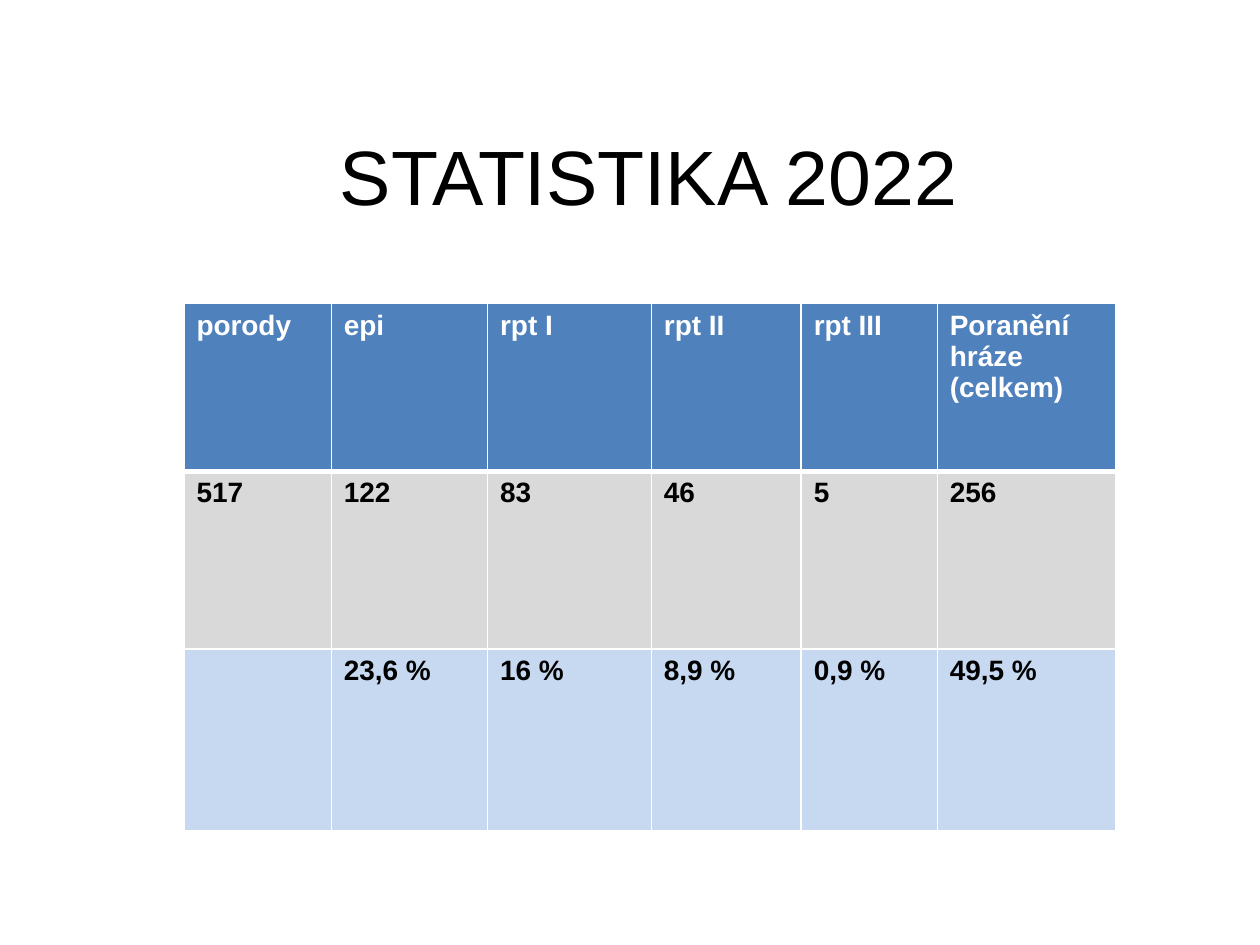
from lxml import etree
from pptx import Presentation
from pptx.dml.color import RGBColor
from pptx.enum.text import MSO_ANCHOR, PP_ALIGN
from pptx.oxml.ns import qn
from pptx.util import Inches, Pt

MIDDLE = MSO_ANCHOR.MIDDLE
CENTER = PP_ALIGN.CENTER

COLORS = {
    "black": "000000",
    "white": "FFFFFF",
    "header": "4F81BD",
    "counts": "D9D9D9",
    "shares": "C6D9F1",
}
TITLE_FONT = {"name": "Arial", "size": Pt(44)}
CELL_FONT = {"name": "Arial", "size": Pt(16), "bold": True}

COL_WIDTHS = [1.17, 1.24, 1.3, 1.19, 1.08, 1.42]
# height, fill, text colour, top and bottom border in points, cell texts
ROWS = [
    (1.33, "header", "white", 1, 3,
     ["porody", "epi", "rpt I", "rpt II", "rpt III", "Poranění hráze\n(celkem)"]),
    (1.41, "counts", "black", 3, 1, ["517", "122", "83", "46", "5", "256"]),
    (1.44, "shares", "black", 1, 1,
     ["", "23,6 %", "16 %", "8,9 %", "0,9 %", "49,5 %"]),
]


def rgb(name):
    return RGBColor.from_string(COLORS[name])


def write(tf, text, font, color):
    tf.text = text
    for p in tf.paragraphs:
        for key, value in font.items():
            setattr(p.font, key, value)
        p.font.color.rgb = rgb(color)
        for r in p.runs:
            for key, value in font.items():
                setattr(r.font, key, value)
            r.font.color.rgb = rgb(color)


def set_borders(cell, widths):
    """Draw white borders; widths maps side letters to points."""
    tc_pr = cell._tc.get_or_add_tcPr()
    for i, (side, width) in enumerate(widths.items()):
        ln = etree.Element(qn(f"a:ln{side}"), w=str(Pt(width)))
        fill = etree.SubElement(ln, qn("a:solidFill"))
        etree.SubElement(fill, qn("a:srgbClr"), val=COLORS["white"])
        tc_pr.insert(i, ln)


def add_title(s, left, top, width, height):
    box = s.shapes.add_textbox(*map(Inches, (left, top, width, height)))
    tf = box.text_frame
    tf.word_wrap = True
    tf.vertical_anchor = MIDDLE
    write(tf, "STATISTIKA 2022", TITLE_FONT, "black")
    tf.paragraphs[0].alignment = CENTER


def add_statistics(s, left, top, width, height):
    frame = s.shapes.add_table(len(ROWS), len(COL_WIDTHS),
                               *map(Inches, (left, top, width, height)))
    table = frame.table
    for column, col_width in zip(table.columns, COL_WIDTHS):
        column.width = Inches(col_width)
    for row, (row_height, fill, color, above, below, texts) in zip(table.rows, ROWS):
        row.height = Inches(row_height)
        for cell, text in zip(row.cells, texts):
            cell.fill.solid()
            cell.fill.fore_color.rgb = rgb(fill)
            write(cell.text_frame, text, CELL_FONT, color)
            set_borders(cell, {"L": 1, "R": 1, "T": above, "B": below})


def main():
    prs = Presentation()
    prs.slide_width, prs.slide_height = Inches(10), Inches(7.5)
    s = prs.slides.add_slide(prs.slide_layouts[6])
    add_title(s, 0.9, -0.74, 8.5, 4.25)
    add_statistics(s, 1.46, 2.41, 7.4, 4.18)
    prs.save("out.pptx")


if __name__ == "__main__":
    main()
